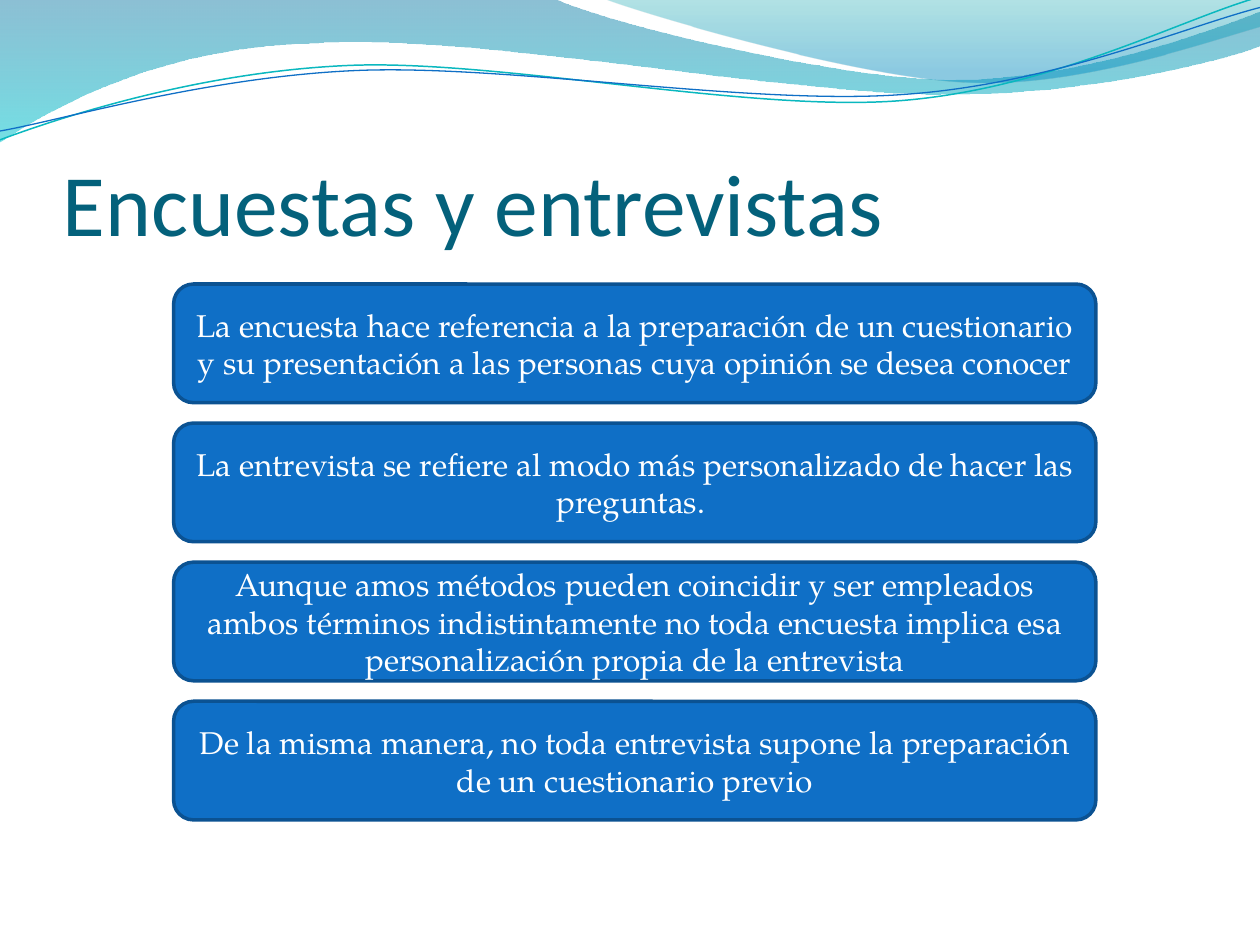
from math import cos, radians, sin

from lxml.etree import SubElement
from pptx import Presentation
from pptx.dml.color import RGBColor
from pptx.enum.shapes import MSO_SHAPE
from pptx.enum.text import MSO_ANCHOR, PP_ALIGN
from pptx.oxml.ns import qn
from pptx.util import Pt

COLORS = {
    "title": "04617B", "card": "0F6FC6", "card_line": "0B5292", "text": "FFFFFF",
    "band_top": "0074A1", "band_bottom": "00C6CF",
    "corner_top": "00A1A9", "corner_bottom": "008BBF",
    "teal_line": "0AB8BF", "blue_line": "0F6FC6",
}
TITLE_FORMAT = {"name": "Calibri", "size": Pt(50)}
CARD_FORMAT = {"name": "TeX Gyre Pagella", "size": Pt(18)}
CARD_TEXTS = [
    "La encuesta hace referencia a la preparación de un cuestionario y su "
    "presentación a las personas cuya opinión se desea conocer",
    "La entrevista se refiere al modo más personalizado de hacer las preguntas. ",
    "Aunque amos métodos pueden coincidir y ser empleados ambos términos "
    "indistintamente no toda encuesta implica esa personalización propia de la entrevista",
    "De la misma manera, no toda entrevista supone la preparación de un "
    "cuestionario previo",
]

# Outlines in points: one pair is a corner, three pairs are a Bézier curve
BAND = [
    [(0, 0)], [(316.8, -0.7)],
    [(342.7, 12.2), (478.1, 45.4), (545.8, 45.4)],
    [(614.2, 45.4), (689.8, 18.7), (720, 6.5)], [(720.7, 25.9)],
    [(707.8, 31.7), (626.4, 54.7), (537.1, 54)],
    [(447.8, 54), (275, 20.2), (185, 24.5)],
    [(92.9, 25.9), (33.1, 59.8), (-0.7, 81.4)], [(0, 0)],
]
CORNER = [
    [(344.9, -0.7)],
    [(366.5, 7.9), (491, 44.6), (553.7, 46.8)],
    [(616.3, 49.7), (691.9, 23), (720, 15.1)], [(720, 0)], [(344.9, -0.7)],
]
TEAL_WAVE = [
    [(0, 79.9)],
    [(34.6, 67), (113.8, 41), (199.4, 37.4)],
    [(284.4, 33.8), (427, 64.1), (513.4, 57.6)],
    [(599.8, 51.1), (675.4, 10.8), (718.6, -1.4)],
]
BLUE_WAVE = [
    [(0, 74.9)],
    [(33.8, 69.1), (118.1, 43.9), (203.8, 40.3)],
    [(290.2, 36.7), (429.8, 60.5), (516.2, 54)],
    [(601.9, 48.2), (677.5, 15.1), (720, 4.3)],
]
WAVE_TILT = 2.7
UNITS_PER_POINT = 100


def rgb(name):
    return RGBColor.from_string(COLORS[name])


def turn(outline, center, degrees):
    """Turn an outline clockwise about a center."""
    cosine, sine = cos(radians(degrees)), sin(radians(degrees))
    center_x, center_y = center
    return [[(center_x + (x - center_x) * cosine - (y - center_y) * sine,
              center_y + (x - center_x) * sine + (y - center_y) * cosine)
             for x, y in part] for part in outline]


def add_outline(slide, left, top, outline, close):
    points = [(x * UNITS_PER_POINT, y * UNITS_PER_POINT)
              for part in outline for x, y in part]
    builder = slide.shapes.build_freeform(*points[0], scale=Pt(1) / UNITS_PER_POINT)
    builder.add_line_segments(points[1:], close=close)
    shape = builder.convert_to_shape(Pt(left), Pt(top))
    shape.shadow.inherit = False

    # Gather the three points of each curve into one Bézier segment
    segments = iter(list(shape._element.iter(qn("a:lnTo"))))
    for part in outline[1:]:
        lines = [next(segments) for _ in part]
        if len(part) == 3:
            curve = lines[0].makeelement(qn("a:cubicBezTo"))
            lines[0].addprevious(curve)
            for line in lines:
                curve.append(line[0])
                line.getparent().remove(line)
    return shape


def add_waves(slide, left, top):
    # Translucent gradient areas; each stop is position, colour, opacity in percent
    areas = [
        (BAND, [(0, "band_top", 45), (1, "band_bottom", 55)]),
        (CORNER, [(0, "corner_top", 30), (0.8, "corner_bottom", 45)]),
    ]
    for outline, stops in areas:
        shape = add_outline(slide, left, top, outline, close=True)
        shape.line.fill.background()
        shape.fill.gradient()
        shape.fill.gradient_angle = 270
        for stop, (position, color, _) in zip(shape.fill.gradient_stops, stops):
            stop.position = position
            stop.color.rgb = rgb(color)
        color_elements = list(shape._element.spPr.iter(qn("a:srgbClr")))
        for element, (_, _, opacity) in zip(color_elements, stops):
            SubElement(element, qn("a:alpha"), val=str(opacity * 1000))

    # Thin wave lines, tilted about their centers
    for outline, center, color, width in [
            (TEAL_WAVE, (359.3, 41.4), "teal_line", 0.85),
            (BLUE_WAVE, (359.6, 42.5), "blue_line", 0.75)]:
        level_outline = turn(outline, center, WAVE_TILT)
        shape = add_outline(slide, left, top, level_outline, close=False)
        shape.rotation = -WAVE_TILT
        shape.fill.background()
        shape.line.color.rgb = rgb(color)
        shape.line.width = Pt(width)


def write_text(shape, text, font_format, color, alignment, frame_format):
    frame = shape.text_frame
    for name, value in {"word_wrap": True, **frame_format}.items():
        setattr(frame, name, value)
    paragraph = frame.paragraphs[0]
    paragraph.alignment = alignment
    run = paragraph.add_run()
    run.text = text
    for name, value in font_format.items():
        setattr(run.font, name, value)
    run.font.color.rgb = rgb(color)


def add_title(slide, left, top, width, height):
    box = slide.shapes.add_textbox(Pt(left), Pt(top), Pt(width), Pt(height))
    write_text(box, "Encuestas y entrevistas", TITLE_FORMAT, "title", PP_ALIGN.LEFT, {
        "vertical_anchor": MSO_ANCHOR.BOTTOM, "margin_left": 0, "margin_right": 0,
        "margin_top": Pt(3.6), "margin_bottom": 0})


def add_cards(slide, left, top, width, height, gap=11.7):
    count = len(CARD_TEXTS)
    card_height = (height - gap * (count - 1)) / count
    for index, text in enumerate(CARD_TEXTS):
        card = slide.shapes.add_shape(
            MSO_SHAPE.ROUNDED_RECTANGLE, Pt(left), Pt(top + index * (card_height + gap)),
            Pt(width), Pt(card_height))
        card.shadow.inherit = False
        card.fill.solid()
        card.fill.fore_color.rgb = rgb("card")
        card.line.color.rgb = rgb("card_line")
        card.line.width = Pt(2)
        write_text(card, text, CARD_FORMAT, "text", PP_ALIGN.CENTER,
                   {"vertical_anchor": MSO_ANCHOR.MIDDLE})


def main():
    presentation = Presentation()
    presentation.slide_width, presentation.slide_height = Pt(720), Pt(540)
    slide = presentation.slides.add_slide(presentation.slide_layouts[6])
    add_waves(slide, 0, 0)
    add_title(slide, 36, 55.4, 654, 90)
    add_cards(slide, 99.2, 162.3, 527, 306.2)
    presentation.save("out.pptx")


if __name__ == "__main__":
    main()
